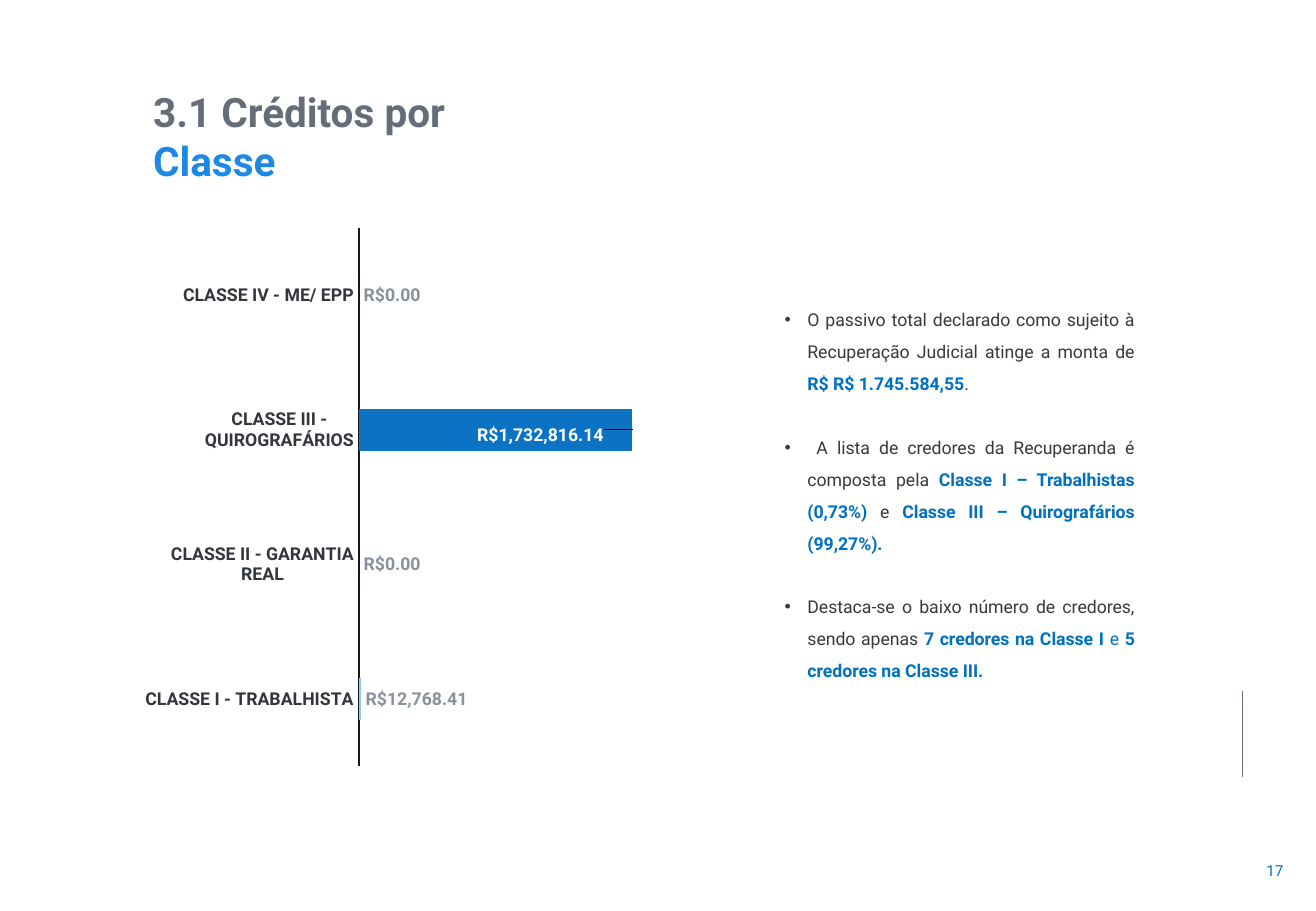
from dataclasses import dataclass

import pptx
import pptx.chart.data
import pptx.dml.color
import pptx.enum.chart
import pptx.enum.shapes
import pptx.enum.text
import pptx.oxml
import pptx.oxml.ns
import pptx.util
from lxml import etree

Pt = pptx.util.Pt
ALIGN = pptx.enum.text.PP_ALIGN
ANCHOR = pptx.enum.text.MSO_ANCHOR
LABEL_POSITION = pptx.enum.chart.XL_LABEL_POSITION

GREY, DARK, BLUE = "656D78", "3B3838", "0070C0"
BODY_SIZE = 10.5
CURRENCY = '"R$"#,##0.00'


@dataclass
class Span:
    text: str
    colour: str = DARK
    bold: bool = False


@dataclass
class ClassCredit:
    name: str
    amount: float
    colour: str


TITLE = [Span("3.1 Créditos por ", GREY, True), Span("Classe", "1E88E5", True)]

FINDINGS = [
    [
        Span("O passivo total declarado como sujeito à Recuperação Judicial atinge a monta de "),
        Span("R$ R$ 1.745.584,55", BLUE, True),
        Span("."),
    ],
    [
        Span(" A lista de credores da Recuperanda é composta pela "),
        Span("Classe I – Trabalhistas (0,73%)", BLUE, True),
        Span(" e "),
        Span("Classe III – Quirografários (99,27%).", BLUE, True),
    ],
    [
        Span("Destaca-se o baixo número de credores, sendo apenas "),
        Span("7 credores na Classe I ", BLUE, True),
        Span("e", BLUE),
        Span(" 5 credores na Classe III.", BLUE, True),
    ],
]

CREDITS = [
    ClassCredit("CLASSE I - TRABALHISTA", 12768.41, "8EC9F9"),
    ClassCredit("CLASSE II - GARANTIA REAL", 0, "0D47A1"),
    ClassCredit("CLASSE III - QUIROGRAFÁRIOS", 1732816.14, "0B72C4"),
    ClassCredit("CLASSE IV - ME/ EPP", 0, "0D47A1"),
]
LARGEST = 2


def rgb(colour: str) -> pptx.dml.color.RGBColor:
    return pptx.dml.color.RGBColor.from_string(colour)


def apply(target, values: dict) -> None:
    """Set each named attribute of target."""
    for name, value in values.items():
        setattr(target, name, value)


def style_font(font, size: float, colour: str, bold: bool = False) -> None:
    apply(font, {"name": "Roboto", "size": Pt(size), "bold": bold})
    font.color.rgb = rgb(colour)


def write(paragraph, spans: list[Span], size: float) -> None:
    for span in spans:
        run = paragraph.add_run()
        run.text = span.text
        style_font(run.font, size, span.colour, span.bold)


def add_text_frame(slide, left: float, top: float, width: float, height: float):
    box = slide.shapes.add_textbox(Pt(left), Pt(top), Pt(width), Pt(height))
    box.text_frame.word_wrap = True
    return box.text_frame


def set_layout(parent, index: int, values: dict) -> None:
    """Give a chart element a manual layout as its child at index."""
    for old in parent.xpath("c:layout"):
        parent.remove(old)
    layout = pptx.oxml.parse_xml(
        f'<c:layout {pptx.oxml.ns.nsdecls("c")}><c:manualLayout/></c:layout>'
    )
    for name, value in values.items():
        etree.SubElement(layout[0], pptx.oxml.ns.qn(f"c:{name}")).set("val", str(value))
    parent.insert(index, layout)


def add_title(slide) -> None:
    title = slide.shapes.title
    apply(title, {"left": Pt(83.5), "top": Pt(48.25), "width": Pt(257), "height": Pt(65)})
    frame = title.text_frame
    apply(frame, {"word_wrap": True, "vertical_anchor": ANCHOR.TOP,
                  "auto_size": pptx.enum.text.MSO_AUTO_SIZE.NONE})
    frame.paragraphs[0].alignment = ALIGN.LEFT
    write(frame.paragraphs[0], TITLE, 24)


def add_findings(slide) -> None:
    frame = add_text_frame(slide, 458, 173.5, 221.75, 215.25)
    for index, spans in enumerate(FINDINGS):
        paragraph = frame.add_paragraph() if index else frame.paragraphs[0]
        properties = paragraph._p.get_or_add_pPr()
        for name, length in {"marL": Pt(13.5), "indent": Pt(-13.5)}.items():
            properties.set(name, str(length))
        etree.SubElement(properties, pptx.oxml.ns.qn("a:buFont")).set("typeface", "Arial")
        etree.SubElement(properties, pptx.oxml.ns.qn("a:buChar")).set("char", "•")
        apply(paragraph, {"alignment": ALIGN.JUSTIFY, "line_spacing": 1.5,
                          "space_before": Pt(19 if index else 0)})
        write(paragraph, spans, BODY_SIZE)


def add_credit_chart(slide) -> None:
    data = pptx.chart.data.CategoryChartData(number_format=CURRENCY)
    data.categories = [credit.name for credit in CREDITS]
    data.add_series("Créditos", [credit.amount for credit in CREDITS])
    chart = slide.shapes.add_chart(
        pptx.enum.chart.XL_CHART_TYPE.BAR_CLUSTERED,
        Pt(79.25), Pt(119.5), Pt(351.25), Pt(338.5), data,
    ).chart
    apply(chart, {"has_legend": False, "has_title": False})
    style_font(chart.font, BODY_SIZE, GREY)

    classes = chart.category_axis
    no_tick = pptx.enum.chart.XL_TICK_MARK.NONE
    apply(classes, {"major_tick_mark": no_tick, "minor_tick_mark": no_tick,
                    "has_major_gridlines": False})
    style_font(classes.tick_labels.font, BODY_SIZE, "33363C", True)
    classes.format.line.color.rgb = rgb("181717")
    classes.format.line.width = Pt(0.75)
    apply(chart.value_axis, {"visible": False, "has_major_gridlines": False,
                             "minimum_scale": 0, "maximum_scale": 2000000})

    plot = chart.plots[0]
    apply(plot, {"gap_width": 219, "vary_by_categories": False})
    series = plot.series[0]
    for index, credit in enumerate(CREDITS):
        fill = series.points[index].format.fill
        fill.solid()
        fill.fore_color.rgb = rgb(credit.colour)

    labels = series.data_labels
    apply(labels, {"show_value": True, "number_format": CURRENCY,
                   "number_format_is_linked": False,
                   "position": LABEL_POSITION.OUTSIDE_END})
    style_font(labels.font, BODY_SIZE, "89919C", True)
    largest_label = series.points[LARGEST].data_label
    style_font(largest_label.font, BODY_SIZE, "FFFFFF", True)
    largest_label.position = LABEL_POSITION.INSIDE_END

    set_layout(chart.element.xpath(".//c:dLbl")[0], 1, {"x": -0.04, "y": 0.01})
    set_layout(chart.element.xpath(".//c:plotArea")[0], 0, {
        "layoutTarget": "inner", "xMode": "edge", "yMode": "edge",
        "x": 0.38, "y": 0.046, "w": 0.533, "h": 0.943,
    })


def add_page_mark(slide) -> None:
    rule = slide.shapes.add_connector(
        pptx.enum.shapes.MSO_CONNECTOR.STRAIGHT, Pt(736.5), Pt(409.75), Pt(736.5), Pt(460.75)
    )
    rule.line.color.rgb = rgb(GREY)
    rule.line.width = Pt(0.5)
    etree.SubElement(rule._element.spPr, pptx.oxml.ns.qn("a:effectLst"))

    frame = add_text_frame(slide, 710.75, 498.25, 57, 36)
    frame.vertical_anchor = ANCHOR.MIDDLE
    frame.paragraphs[0].alignment = ALIGN.RIGHT
    write(frame.paragraphs[0], [Span("17", BLUE)], 9)


def main() -> None:
    presentation = pptx.Presentation()
    apply(presentation, {"slide_width": Pt(780), "slide_height": Pt(540)})
    slide = presentation.slides.add_slide(presentation.slide_layouts[5])
    add_page_mark(slide)
    add_findings(slide)
    add_credit_chart(slide)
    add_title(slide)
    presentation.save("out.pptx")


if __name__ == "__main__":
    main()
